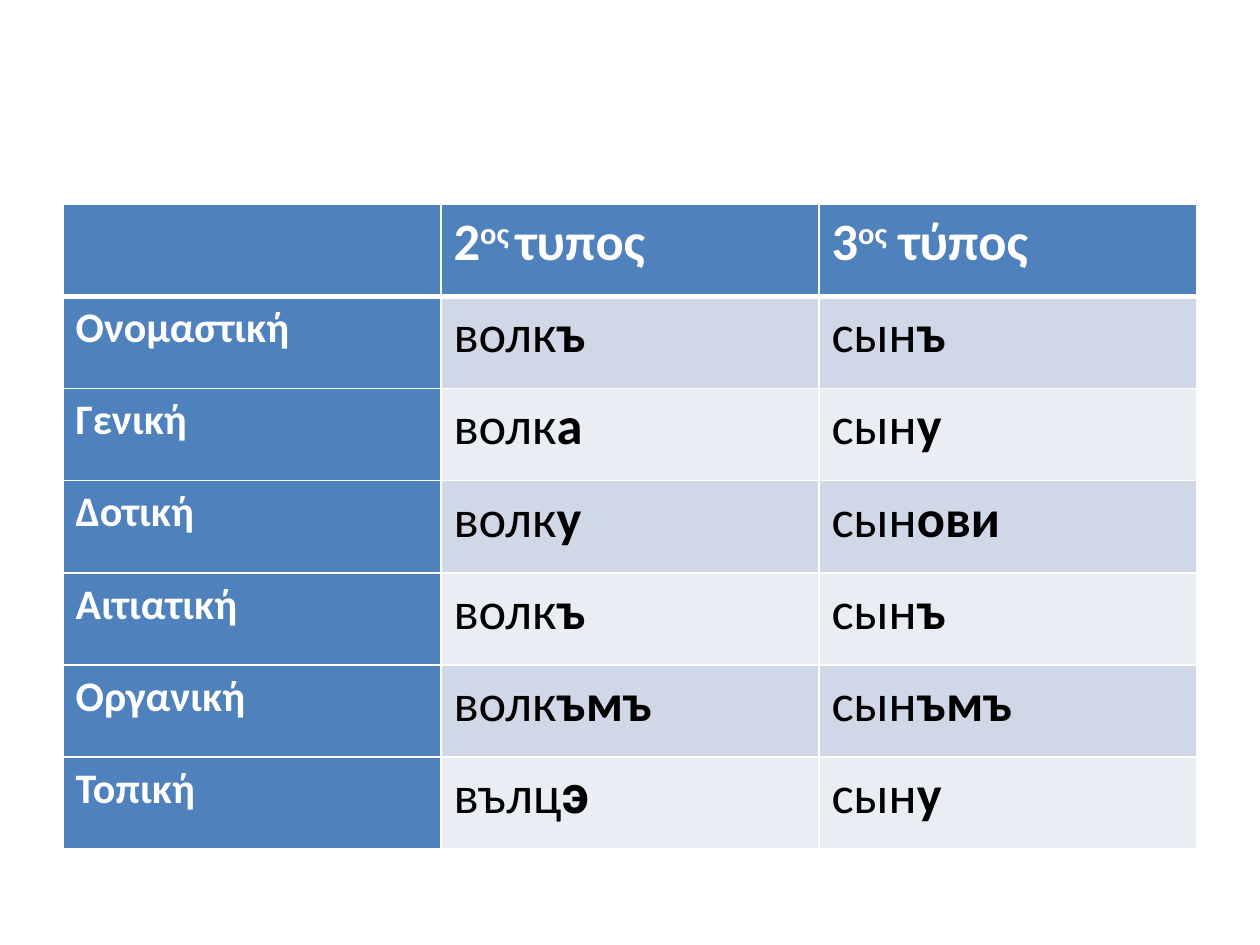
"""Build a slide with a table of Slavic noun endings by case."""
from lxml import etree
from pptx import Presentation
from pptx import util as u
from pptx.dml.color import RGBColor
from pptx.oxml.ns import qn

WHITE = RGBColor(0xFF, 0xFF, 0xFF)
BLACK = RGBColor(0x00, 0x00, 0x00)
HEADING_BLUE = RGBColor(0x4F, 0x81, 0xBD)
BANDS = (RGBColor(0xD0, 0xD8, 0xE8), RGBColor(0xE9, 0xED, 0xF4))
FONT = "Calibri"

TYPES = [("2", "ος ", "τυπος"), ("3", "ος", " τύπος")]
DECLENSION = [
    ("Ονομαστική", ("волк", "ъ"), ("сын", "ъ")),
    ("Γενική", ("волк", "а"), ("сын", "у")),
    ("Δοτική", ("волк", "у"), ("сын", "ови")),
    ("Αιτιατική", ("волк", "ъ"), ("сын", "ъ")),
    ("Οργανική", ("волк", "ъмъ"), ("сын", "ъмъ")),
    ("Τοπική", ("вълц", "э"), ("сын", "у")),
]


def style_cell(cell, fill, bottom=1):
    properties = cell._tc.get_or_add_tcPr()
    for side, width in (("L", 1), ("R", 1), ("T", 1), ("B", bottom)):
        border = etree.SubElement(properties, qn(f"a:ln{side}"), w=str(u.Pt(width)))
        paint = etree.SubElement(border, qn("a:solidFill"))
        etree.SubElement(paint, qn("a:srgbClr"), val=str(WHITE))
    cell.fill.solid()
    cell.fill.fore_color.rgb = fill


def write(cell, parts, size, color, bold=None):
    paragraph = cell.text_frame.paragraphs[0]
    paragraph.font.size = u.Pt(size)
    paragraph.font.name = FONT
    paragraph.font.color.rgb = color
    paragraph.font.bold = bold
    runs = []
    for part in parts:
        run = paragraph.add_run()
        run.text = part
        run.font.size = u.Pt(size)
        run.font.name = FONT
        run.font.color.rgb = color
        run.font.bold = bold
        runs.append(run)
    return runs


def write_type(cell, parts):
    style_cell(cell, HEADING_BLUE, bottom=3)
    ordinal = write(cell, parts, 30, WHITE, True)[1]
    ordinal.font._element.set("baseline", "30000")


def write_case(cell, case):
    style_cell(cell, HEADING_BLUE)
    write(cell, [case], 24, WHITE, True)


def write_form(cell, form, band):
    style_cell(cell, band)
    ending = write(cell, form, 30, BLACK, False)[1]
    ending.font.bold = True
    if ending.text == "э":
        ending.font.name = "Roboto"


def add_declension(slide):
    table = slide.shapes.add_table(
        len(DECLENSION) + 1, len(TYPES) + 1,
        u.Cm(1.27), u.Cm(4.12), u.Cm(22.86), u.Cm(13)).table
    table.first_col = True
    style_cell(table.cell(0, 0), HEADING_BLUE, bottom=3)
    for column, parts in enumerate(TYPES, 1):
        write_type(table.cell(0, column), parts)
    for row, (case, *forms) in enumerate(DECLENSION, 1):
        write_case(table.cell(row, 0), case)
        for column, form in enumerate(forms, 1):
            write_form(table.cell(row, column), form, BANDS[(row - 1) % 2])


def main():
    deck = Presentation()
    deck.slide_width, deck.slide_height = u.Cm(25.4), u.Cm(19.05)
    add_declension(deck.slides.add_slide(deck.slide_layouts[6]))
    deck.save("out.pptx")


if __name__ == "__main__":
    main()
